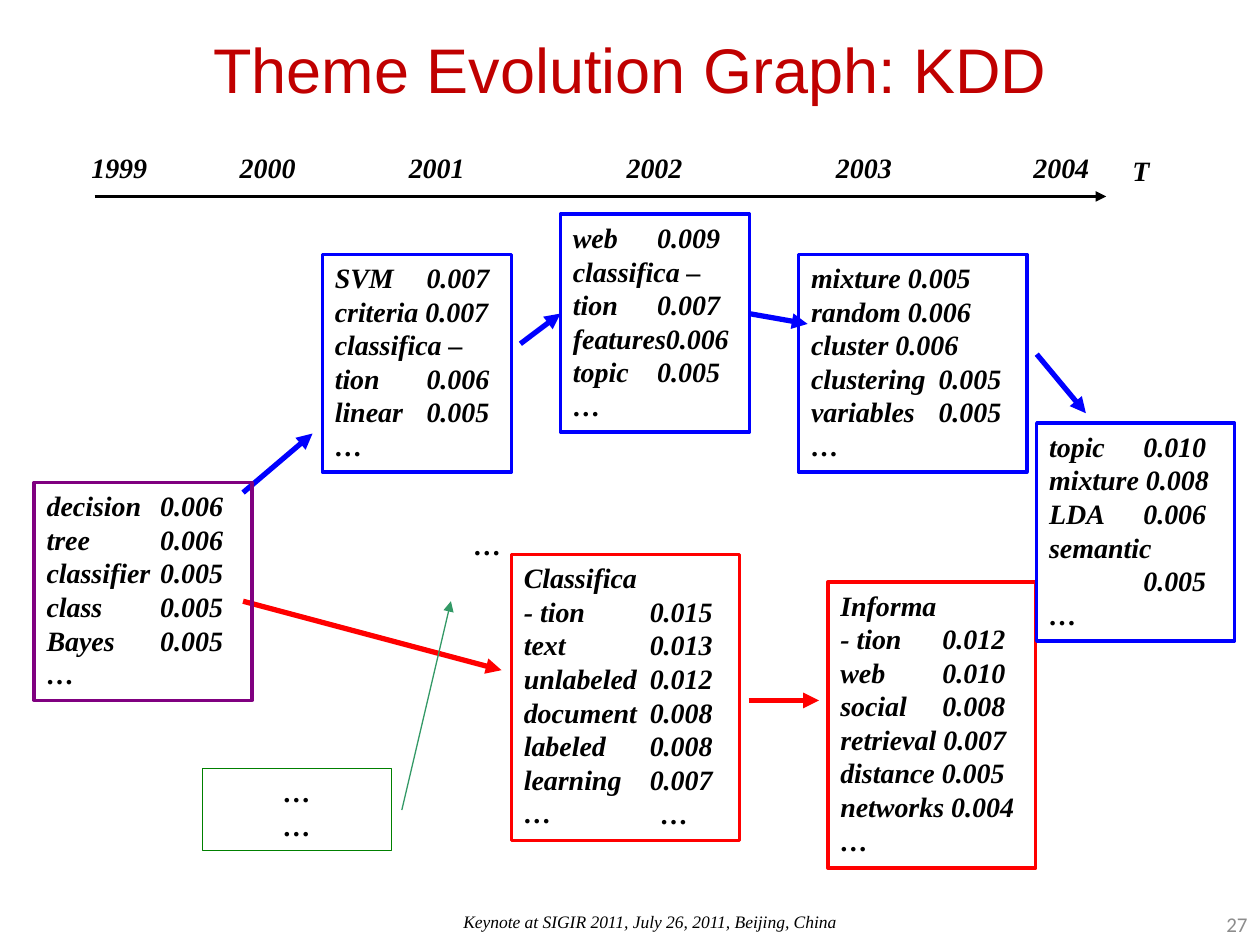
from lxml.etree import SubElement
from pptx import Presentation
from pptx.dml.color import RGBColor
from pptx.enum.shapes import MSO_CONNECTOR, MSO_SHAPE
from pptx.enum.text import MSO_ANCHOR, PP_ALIGN
from pptx.oxml.ns import qn
from pptx.util import Cm, Pt

BOLD = {"name": "Times New Roman", "size": Pt(16), "bold": True, "italic": True}
NOTE = {"name": "Times New Roman", "size": Pt(10), "italic": True}
PAGE = {"name": "Calibri", "size": Pt(12)}
HEAD = {"name": "Arial", "size": Pt(36), "bold": False}

BLUE, RED, PURPLE, GREEN = "0000FF", "FF0000", "800080", "008000"

YEARS = [("1999", 0), ("2000", 2.99), ("2001", 6.4), ("2002", 10.79),
         ("2003", 15.01), ("2004", 18.99)]

LINKS = [
    ((4.9, 9.93), (6.3, 8.74), BLUE, 3),
    ((10.49, 6.93), (11.3, 6.32), BLUE, 3),
    ((15.09, 6.32), (16.28, 6.53), BLUE, 3),
    ((20.9, 7.14), (21.89, 8.33), BLUE, 3),
    ((4.9, 12.12), (10.11, 13.51), RED, 3),
    ((15.09, 14.12), (16.51, 14.12), RED, 3),
    ((8.1, 16.33), (9.09, 12.12), "339966", 0.75),
]

THEMES = [
    ((6.5, 5.13, 3.81, 4.39), BLUE, 1.85,
     "SVM\t0.007\vcriteria 0.007\vclassifica –\vtion\t0.006\vlinear\t0.005\n…"),
    ((0.69, 9.73, 4.39, 4.39), PURPLE, 2.29,
     "decision\t0.006\vtree\t0.006\vclassifier\t0.005\vclass\t0.005\vBayes\t0.005\n…"),
    ((10.31, 11.18, 4.6, 5.77), RED, 2.54,
     "Classifica\v- tion\t0.015\vtext\t0.013\vunlabeled\t0.012\vdocument\t0.008\v"
     "labeled\t0.008\vlearning\t0.007\n…"),
    ((16.69, 11.73, 4.19, 5.77), RED, 2.06,
     "Informa\v- tion\t0.012\vweb\t0.010\vsocial\t0.008\vretrieval 0.007\v"
     "distance 0.005\vnetworks 0.004\n…"),
    ((11.3, 4.32, 3.81, 4.39), BLUE, 1.7,
     "web\t0.009\vclassifica –\vtion\t0.007\vfeatures0.006\vtopic\t0.005\v…"),
    ((16.1, 5.13, 4.6, 4.39), BLUE, 2.57,
     "mixture 0.005\vrandom 0.006\vcluster 0.006\vclustering\t0.005\n"
     "variables\t0.005\v…"),
    ((20.9, 8.53, 3.99, 4.39), BLUE, 1.9,
     "topic\t0.010\vmixture 0.008\vLDA\t0.006\vsemantic\v\t0.005\n…"),
]


def hue(code):
    """Turn a hex string into a colour."""
    return RGBColor.from_string(code)


def put(item, values):
    """Set each named attribute of an item."""
    for name, value in values.items():
        setattr(item, name, value)


def write(shape, text, font, color="000000", align=PP_ALIGN.LEFT,
          anchor=MSO_ANCHOR.TOP, tab=None):
    """Fill a shape with formatted text."""
    frame = shape.text_frame
    frame.text = text
    put(frame, {"word_wrap": True, "vertical_anchor": anchor})
    for para in frame.paragraphs:
        para.alignment = align
        if tab:
            stops = SubElement(para._p.get_or_add_pPr(), qn("a:tabLst"))
            SubElement(stops, qn("a:tab"), pos=str(Cm(tab)), algn="l")
        for run in para.runs:
            put(run.font, font)
            run.font.color.rgb = hue(color)


def label(slide, box, text, font=BOLD, **style):
    """Place a text box."""
    write(slide.shapes.add_textbox(*map(Cm, box)), text, font, **style)


def link(slide, start, end, color, width):
    """Draw an arrow between two points."""
    arrow = slide.shapes.add_connector(
        MSO_CONNECTOR.STRAIGHT, *map(Cm, (*start, *end)))
    arrow.line.color.rgb = hue(color)
    arrow.line.width = Pt(width)
    SubElement(arrow.line._get_or_add_ln(), qn("a:tailEnd"), type="triangle")
    SubElement(arrow._element.spPr, qn("a:effectLst"))


def theme(slide, box, color, tab, text, width=2, align=PP_ALIGN.LEFT):
    """Draw an outlined box of words and weights."""
    card = slide.shapes.add_shape(MSO_SHAPE.RECTANGLE, *map(Cm, box))
    card.shadow.inherit = False
    card.fill.background()
    card.line.color.rgb = hue(color)
    card.line.width = Pt(width)
    write(card, text, BOLD, align=align, tab=tab)


def title(slide, box, text):
    """Move and fill the title."""
    head = slide.shapes.title
    put(head, dict(zip(("left", "top", "width", "height"), map(Cm, box))))
    write(head, text, HEAD, "C00000", PP_ALIGN.CENTER, MSO_ANCHOR.MIDDLE)


def axis(slide, box):
    """Draw the time line with its years."""
    left, top, width, height = box
    base = top + height
    link(slide, (left + 0.61, base), (left + width, base), "000000", 2)
    for year, shift in YEARS:
        label(slide, (left + shift, top, 2.21, 0.94), year,
              align=PP_ALIGN.CENTER)
    label(slide, (left + width, top + 0.05, 1.4, 0.94), "T",
          align=PP_ALIGN.CENTER)


def graph(slide):
    """Draw the themes, their links and the omitted ones."""
    for item in LINKS:
        link(slide, *item)
    for item in THEMES:
        theme(slide, *item)
    theme(slide, (4.09, 15.49, 3.81, 1.65), GREEN, None, "…\n…", 0.75,
          PP_ALIGN.CENTER)
    for box in ((11.3, 15.93, 4.6, 0.94), (9.3, 10.52, 1.07, 0.94)):
        label(slide, box, "…", align=PP_ALIGN.CENTER)


def foot(slide, box):
    """Write the event and the page number."""
    left, top, width, height = box
    label(slide, (left, top, 10.36, height),
          "Keynote at SIGIR 2011, July 26, 2011, Beijing, China", NOTE)
    label(slide, (left + width - 5.92, top - 0.13, 5.92, height), "27", PAGE,
          color="8C8C8C", align=PP_ALIGN.RIGHT, anchor=MSO_ANCHOR.MIDDLE)


def main():
    """Build and save the slide."""
    deck = Presentation()
    put(deck, {"slide_width": Cm(25.4), "slide_height": Cm(19.05)})
    slide = deck.slides.add_slide(deck.slide_layouts[5])
    title(slide, (0, 0, 25.4, 2.74), "Theme Evolution Graph: KDD")
    axis(slide, (1.3, 2.92, 21, 1.04))
    graph(slide)
    foot(slide, (9.09, 18.24, 16.31, 1.02))
    deck.save("out.pptx")


if __name__ == "__main__":
    main()
